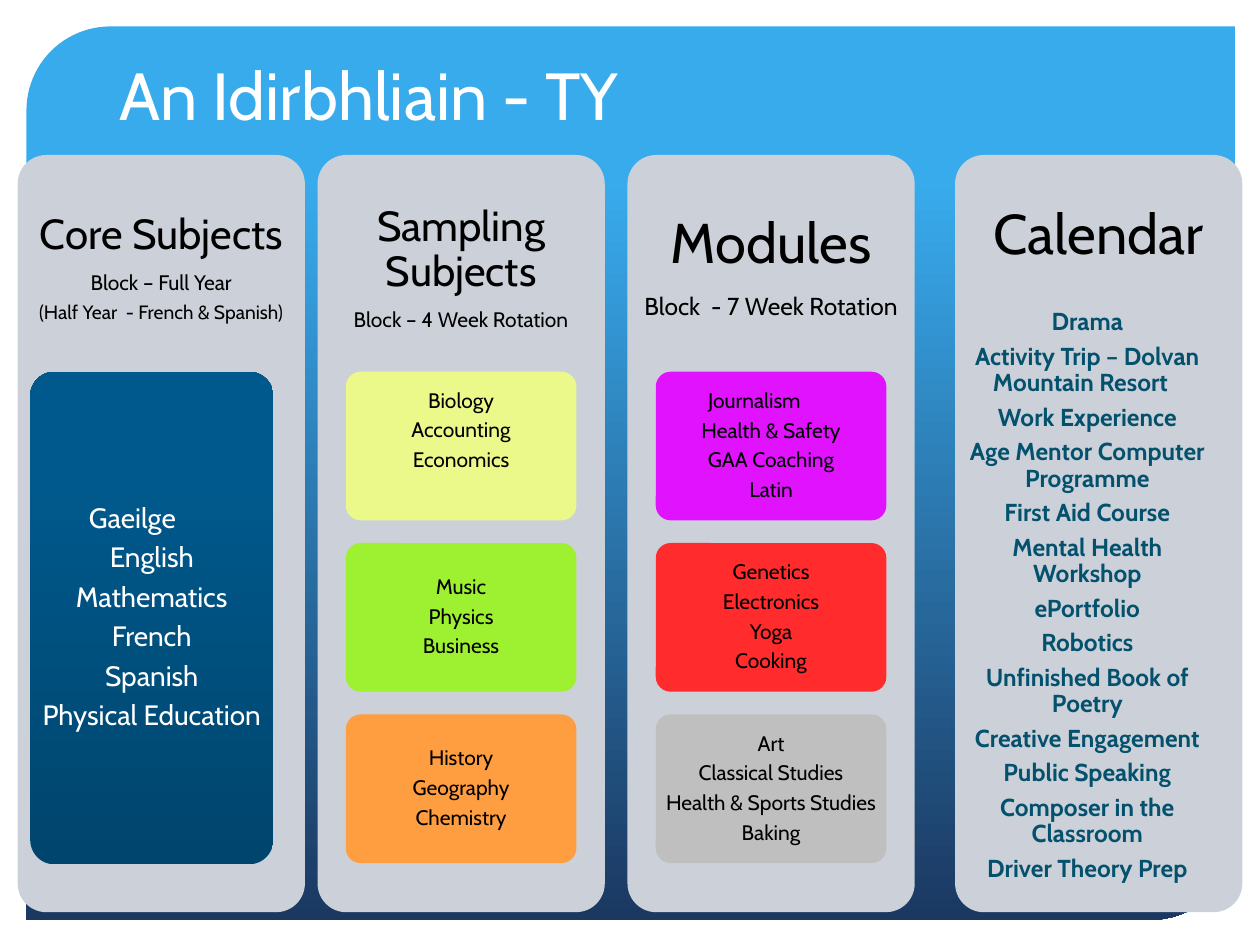
"""Build the An Idirbhliain - TY slide: four columns of subjects, modules and events."""
from lxml import etree
from pptx import Presentation
from pptx.dml.color import RGBColor
from pptx.enum.shapes import MSO_SHAPE
from pptx.enum.text import MSO_ANCHOR, MSO_AUTO_SIZE, PP_ALIGN
from pptx.oxml.ns import qn
from pptx.util import Inches, Pt

ROUNDED = MSO_SHAPE.ROUNDED_RECTANGLE
DIAGONAL = MSO_SHAPE.ROUND_2_DIAG_RECTANGLE
MIDDLE, BOTTOM = MSO_ANCHOR.MIDDLE, MSO_ANCHOR.BOTTOM
CENTER, LEFT = PP_ALIGN.CENTER, PP_ALIGN.LEFT
NO_FIT = MSO_AUTO_SIZE.NONE

COLORS = {
    "white": "FFFFFF", "black": "000000", "sky": "38ABED", "navy": "1B3861",
    "column": "CCD1D9", "panel_dark": "00456D", "panel_light": "00598D",
    "yellow": "EBF98B", "green": "9DF131", "orange": "FF9E40",
    "magenta": "E113FF", "red": "FF2B2C", "gray": "BFBFBF", "teal": "04516D",
}
COLUMN_LEFTS = [0.14, 2.52, 4.98, 7.58]
COLUMN_TOP, COLUMN_WIDTH, COLUMN_HEIGHT = 1.23, 2.28, 6.01
CARD_TOP, CARD_WIDTH, CARD_HEIGHT, CARD_STEP = 2.95, 1.83, 1.18, 1.36
CARD_INDENT = (COLUMN_WIDTH - CARD_WIDTH) / 2

HEADINGS = [
    (1.8, 0.1, [("Core Subjects", 24), ("Block – Full Year", 12),
                ("(Half Year  - French & Spanish)", 11)]),
    (1.8, 0.1, [("Sampling Subjects", 24), ("Block – 4 Week Rotation", 12)]),
    (1.8, 0.13, [("Modules", 32), ("Block  - 7 Week Rotation", 14)]),
    (1.3, 0.13, [("Calendar", 32)]),
]
CORE = ["Gaeilge\t", "English", "Mathematics", "French", "Spanish", "Physical Education"]
CARDS = {
    1: [("yellow", ["Biology", "Accounting", "Economics"]),
        ("green", ["Music", "Physics", "Business"]),
        ("orange", ["History", "Geography", "Chemistry"])],
    2: [("magenta", ["Journalism\t", "Health & Safety", "GAA Coaching", "Latin"]),
        ("red", ["Genetics", "Electronics", "Yoga", "Cooking"]),
        ("gray", ["Art", "Classical Studies", "Health & Sports Studies", "Baking"])],
}
CALENDAR = [
    "Drama", "Activity Trip – Dolvan Mountain Resort\t", "Work Experience",
    "Age Mentor Computer Programme", "First Aid Course", "Mental Health Workshop",
    "ePortfolio", "Robotics", "Unfinished Book of Poetry", "Creative Engagement",
    "Public Speaking", "Composer in the Classroom", "Driver Theory Prep",
]

deck = Presentation()
deck.slide_width, deck.slide_height = Inches(10), Inches(7.5)
page = deck.slides.add_slide(deck.slide_layouts[1])
shapes = page.shapes


def add_block(left, top, width, height, colors, kind=ROUNDED, round_by=0.1, angle=270, stops=(0, 1)):
    block = shapes.add_shape(kind, Inches(left), Inches(top), Inches(width), Inches(height))
    block.shadow.inherit = False
    block.line.fill.background()
    block.adjustments[0] = round_by
    if len(colors) == 1:
        block.fill.solid()
        block.fill.fore_color.rgb = RGBColor.from_string(COLORS[colors[0]])
    else:
        block.fill.gradient()
        block.fill.gradient_angle = angle
        for stop, name, position in zip(block.fill.gradient_stops, colors, stops):
            stop.color.rgb = RGBColor.from_string(COLORS[name])
            stop.position = position
    return block


def write(box, lines, color, inset, anchor=MIDDLE, align=CENTER, bold=False):
    frame = box.text_frame
    frame.word_wrap = True
    frame.auto_size = NO_FIT
    frame.vertical_anchor = anchor
    frame.margin_left = frame.margin_right = Inches(inset)
    frame.margin_top = frame.margin_bottom = Inches(min(inset, 0.1))
    for number, (text, size) in enumerate(lines):
        para = frame.paragraphs[0] if number == 0 else frame.add_paragraph()
        properties = para._p.get_or_add_pPr()
        properties.set("marL", "0")
        properties.set("indent", "0")
        etree.SubElement(properties, qn("a:buNone"))
        para.alignment = align
        para.line_spacing = 0.9
        para.space_before = Pt(0)
        para.space_after = Pt(round(size * 0.33, 1))
        span = para.add_run()
        span.text = text
        span.font.size = Pt(size)
        span.font.name = "Cabin"
        span.font.bold = bold
        span.font.color.rgb = RGBColor.from_string(COLORS[color])


add_block(0.21, 0.21, 9.59, 7.09, ["sky", "navy"], DIAGONAL, 0.094, stops=(0.17, 1))

title = shapes.title
title.left, title.top, title.width, title.height = Inches(0.85), Inches(0.02), Inches(8.29), Inches(1.14)
write(title, [("An Idirbhliain - TY", 38)], "white", 0.1, BOTTOM, LEFT)
title.text_frame.paragraphs[0].line_spacing = 1.0
title.text_frame.paragraphs[0].space_after = Pt(0)
shapes._spTree.append(title._element)

for left, (height, inset, lines) in zip(COLUMN_LEFTS, HEADINGS):
    add_block(left, COLUMN_TOP, COLUMN_WIDTH, COLUMN_HEIGHT, ["column"])
    heading = shapes.add_textbox(Inches(left), Inches(COLUMN_TOP), Inches(COLUMN_WIDTH), Inches(height))
    write(heading, lines, "black", inset)

core = add_block(0.24, CARD_TOP, 1.93, 3.91, ["panel_dark", "panel_light"], angle=90, stops=(0, 0.8))
write(core, [(name, 16) for name in CORE], "white", 0.04)

for column, cards in CARDS.items():
    for row, (color, names) in enumerate(cards):
        card = add_block(COLUMN_LEFTS[column] + CARD_INDENT, CARD_TOP + row * CARD_STEP,
                         CARD_WIDTH, CARD_HEIGHT, [color])
        write(card, [(name, 12) for name in names], "black", 0.03)
        if color == "yellow":
            card.text_frame.margin_bottom = Inches(0.27)

events = page.placeholders[1]
events.left, events.top, events.width, events.height = (
    Inches(COLUMN_LEFTS[3]), Inches(2.38), Inches(2.1), Inches(4.7))
write(events, [(name, 14) for name in CALENDAR], "teal", 0.04, bold=True)
shapes._spTree.append(events._element)

deck.save("out.pptx")
